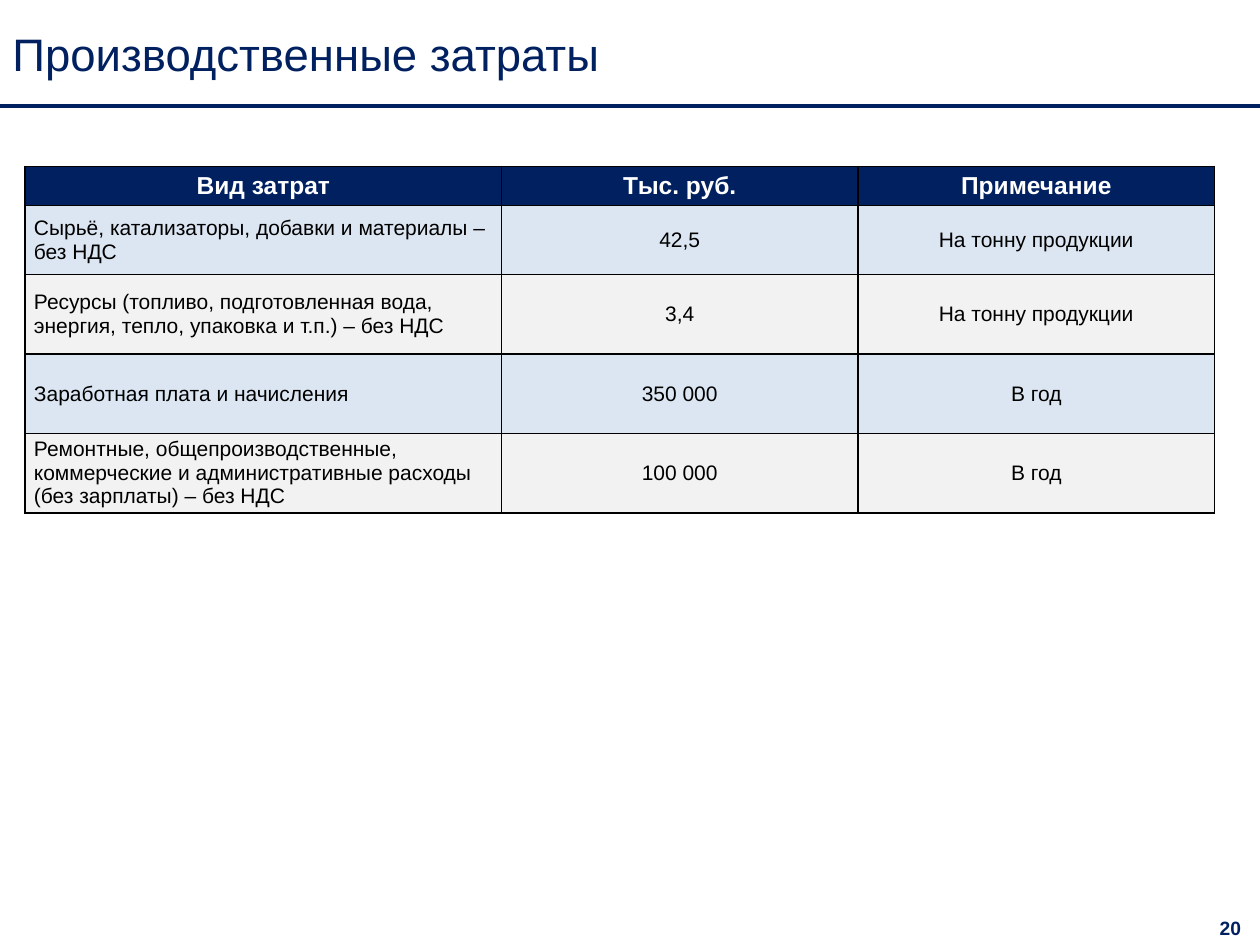
"""Builds the production costs slide with its cost table."""
from lxml import etree
from pptx import Presentation
from pptx.dml.color import RGBColor
from pptx.enum.shapes import MSO_CONNECTOR
from pptx.enum.text import MSO_ANCHOR, PP_ALIGN
from pptx.oxml.ns import qn
from pptx.util import Inches, Pt

LEFT, CENTER = PP_ALIGN.LEFT, PP_ALIGN.CENTER
TOP, MIDDLE = MSO_ANCHOR.TOP, MSO_ANCHOR.MIDDLE
STRAIGHT = MSO_CONNECTOR.STRAIGHT

TITLE = "Производственные затраты"
PAGE_NUMBER = "20"
HEADER = ("Вид затрат", "Тыс. руб.", "Примечание")
COSTS = [
    ("Сырьё, катализаторы, добавки и материалы – без НДС", "42,5", "На тонну продукции"),
    ("Ресурсы (топливо, подготовленная вода, энергия, тепло, упаковка и т.п.) – без НДС",
     "3,4", "На тонну продукции"),
    ("Заработная плата и начисления", "350 000", "В год"),
    ("Ремонтные, общепроизводственные, коммерческие и административные расходы "
     "(без зарплаты) – без НДС", "100 000", "В год"),
]
COLORS = {"navy": "002060", "white": "FFFFFF", "black": "000000",
          "blue_band": "DCE6F2", "grey_band": "F2F2F2"}
FONT = "Arial"
TITLE_HEIGHT = 0.84
COLUMN_WIDTHS = (3.78, 2.83, 2.83)
ROW_HEIGHTS = (0.31, 0.55, 0.63, 0.63, 0.63)


def rgb(color):
    return RGBColor.from_string(COLORS[color])


def write(frame, text, size, color, bold=False, align=LEFT):
    paragraph = frame.paragraphs[0]
    paragraph.alignment = align
    run = paragraph.add_run()
    run.text = text
    run.font.name = FONT
    run.font.size = Pt(size)
    run.font.bold = bold
    run.font.color.rgb = rgb(color)


def add_label(slide, box, text, size, anchor, **style):
    frame = slide.shapes.add_textbox(*map(Inches, box)).text_frame
    frame.word_wrap = True
    frame.vertical_anchor = anchor
    write(frame, text, size, "navy", **style)


def add_rule(slide, width):
    y = Inches(TITLE_HEIGHT)
    rule = slide.shapes.add_connector(STRAIGHT, 0, y, width, y)
    rule.line.color.rgb = rgb("navy")
    rule.line.width = Pt(2)
    etree.SubElement(rule._element.spPr, qn("a:effectLst"))


def add_borders(cell):
    properties = cell._tc.get_or_add_tcPr()
    for side in ("lnL", "lnR", "lnT", "lnB"):
        border = etree.SubElement(properties, qn(f"a:{side}"), w=str(Pt(1)))
        fill = etree.SubElement(border, qn("a:solidFill"))
        etree.SubElement(fill, qn("a:srgbClr"), val=COLORS["black"])


def fill_cell(cell, text, background, size, color, bold, align):
    cell.margin_left = cell.margin_right = Inches(0.07)
    cell.margin_top = cell.margin_bottom = 0
    cell.vertical_anchor = MIDDLE
    add_borders(cell)
    cell.fill.solid()
    cell.fill.fore_color.rgb = rgb(background)
    write(cell.text_frame, text, size, color, bold, align)


def add_cost_table(slide):
    rows = [HEADER, *COSTS]
    box = (0.2, 1.32, sum(COLUMN_WIDTHS), sum(ROW_HEIGHTS))
    table = slide.shapes.add_table(len(rows), len(HEADER), *map(Inches, box)).table
    for column, width in zip(table.columns, COLUMN_WIDTHS):
        column.width = Inches(width)
    for r, (values, height) in enumerate(zip(rows, ROW_HEIGHTS)):
        table.rows[r].height = Inches(height)
        for c, text in enumerate(values):
            if r == 0:
                style = ("navy", 14, "white", True, CENTER)
            else:
                band = "blue_band" if r % 2 else "grey_band"
                style = (band, 12, "black", False, CENTER if c else LEFT)
            fill_cell(table.cell(r, c), text, *style)


def main():
    deck = Presentation()
    deck.slide_width, deck.slide_height = Inches(10), Inches(7.5)
    slide = deck.slides.add_slide(deck.slide_layouts[6])
    add_rule(slide, deck.slide_width)
    add_label(slide, (0, 0, 10, TITLE_HEIGHT), TITLE, 26, MIDDLE)
    add_cost_table(slide)
    add_label(slide, (9.53, 7.22, 0.47, 0.29), PAGE_NUMBER, 11, TOP, bold=True, align=CENTER)
    deck.save("out.pptx")


if __name__ == "__main__":
    main()
